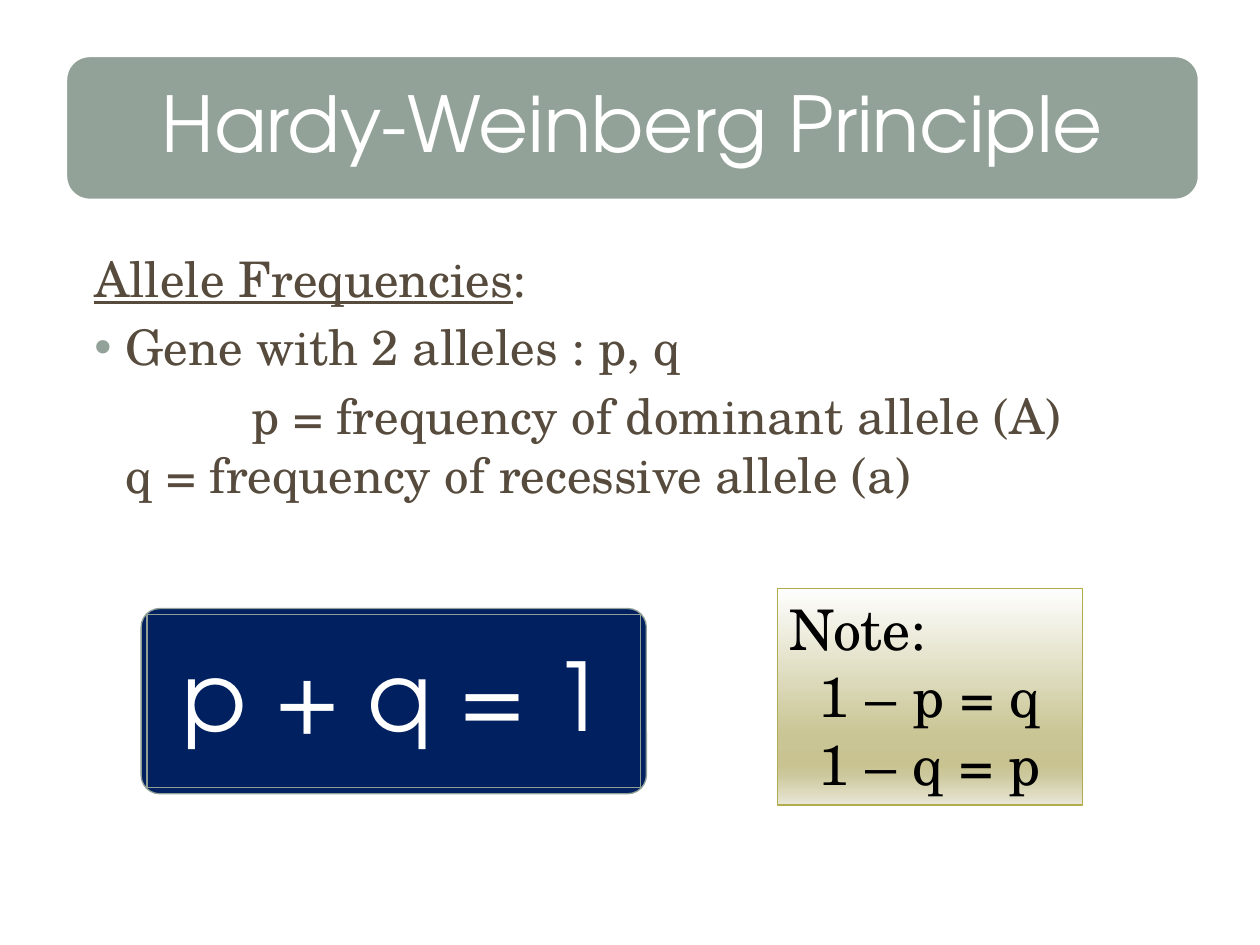
from collections import namedtuple

from lxml.etree import SubElement
from pptx import Presentation
from pptx.dml.color import RGBColor
from pptx.enum.shapes import MSO_SHAPE as Shape
from pptx.enum.text import MSO_ANCHOR as Anchor, MSO_AUTO_SIZE as AutoSize, PP_ALIGN as Align
from pptx.oxml.ns import qn
from pptx.util import Inches, Pt

COLORS = {
    "sage": "93A299", "sage_line": "8F9F96", "navy": "002060", "brown": "564B3C",
    "white": "FFFFFF", "black": "000000", "olive_line": "B3AC4F",
}
NOTE_STOPS = [(0, "FEFEFE"), (68, "C9C594"), (81, "C8C390"), (86, "CCC89C"), (100, "E9E7D7")]
SANS, SERIF = "TeX Gyre Adventor", "TeX Gyre Schola"

# Grid of 100 columns by 75 rows
SLIDE_W, SLIDE_H = Inches(10), Inches(7.5)
COL, ROW = SLIDE_W / 100, SLIDE_H / 75


class Box(namedtuple("Box", "left top width height")):
    def inset(self, gap):
        return Box(self.left + gap, self.top + gap, self.width - 2 * gap, self.height - 2 * gap)

    def emu(self):
        return (round(self.left * COL), round(self.top * ROW),
                round(self.width * COL), round(self.height * ROW))


def rgb(name):
    return RGBColor.from_string(COLORS[name])


def add_panel(slide, box, preset, fill=None, line="white", weight=0.75, corner=None):
    panel = slide.shapes.add_shape(preset, *box.emu())
    panel.shadow.inherit = False
    if corner is not None:
        panel.adjustments[0] = corner
    if fill:
        panel.fill.solid()
        panel.fill.fore_color.rgb = rgb(fill)
    panel.line.color.rgb = rgb(line)
    panel.line.width = Pt(weight)
    return panel


def set_frame(holder, anchor=Anchor.TOP, margin=None):
    frame = holder.text_frame
    frame.word_wrap = True
    frame.auto_size = AutoSize.NONE
    frame.vertical_anchor = anchor
    if margin is not None:
        frame.margin_left = frame.margin_right = Inches(margin)
        frame.margin_top = frame.margin_bottom = Inches(margin)
    return frame


def write(frame, text, font=SERIF, size=28, color="brown", align=Align.LEFT, underlined="",
          before=0, after=0, spacing=1.0, left=0, first=0, bullet=None):
    """Add a paragraph; before and after are shares of the text size."""
    paragraph = frame.paragraphs[0]
    if paragraph.text:
        paragraph = frame.add_paragraph()
    paragraph.alignment = align
    paragraph.line_spacing = spacing
    paragraph.space_before, paragraph.space_after = Pt(size * before), Pt(size * after)
    props = paragraph._p.get_or_add_pPr()
    props.set("marL", str(Inches(left)))
    props.set("indent", str(Inches(first)))
    if bullet:
        tint = SubElement(props, qn("a:buClr"))
        SubElement(tint, qn("a:srgbClr"), val=COLORS[bullet])
        SubElement(props, qn("a:buFont"), typeface="Arial")
        SubElement(props, qn("a:buChar"), char="•")
    else:
        SubElement(props, qn("a:buNone"))
    for part, underline in ((underlined, True), (text, False)):
        if not part:
            continue
        for number, row in enumerate(part.split("\n")):
            if number:
                paragraph.add_line_break()
            run = paragraph.add_run()
            run.text = row
            run.font.name, run.font.size = font, Pt(size)
            run.font.color.rgb = rgb(color)
            run.font.underline = underline


def add_title(slide, box):
    # Banner goes behind the title placeholder
    banner = add_panel(slide, box, Shape.ROUNDED_RECTANGLE, "sage", weight=2)
    title = slide.shapes.title
    title._element.addprevious(banner._element)
    title.left, title.top, title.width, title.height = box.inset(0.55).emu()
    write(set_frame(title, Anchor.MIDDLE, 0.18), "Hardy-Weinberg Principle", font=SANS, size=44,
          color="white", align=Align.CENTER, spacing=0.9, after=0.35)


def add_definitions(slide, box):
    frame = set_frame(slide.shapes.add_textbox(*box.emu()))
    hanging = dict(before=0.2, left=0.38, first=-0.25)
    write(frame, ":", underlined="Allele Frequencies", **hanging)
    write(frame, "Gene with 2 alleles : p, q", bullet="sage", **hanging)
    write(frame, "p = frequency of dominant allele (A)\nq = frequency of recessive allele (a)",
          before=0.2, left=0.38, first=1)


def add_formula(slide, box):
    add_panel(slide, box, Shape.ROUNDED_RECTANGLE, "navy", "sage_line", corner=0.1)
    inner = add_panel(slide, box.inset(0.48), Shape.RECTANGLE, "navy", "sage_line")
    write(set_frame(inner, Anchor.MIDDLE, 0.11), "p + q = 1", font=SANS, size=54,
          color="white", align=Align.CENTER, spacing=0.9, after=0.35)


def add_note(slide, box):
    note = add_panel(slide, box, Shape.RECTANGLE, line="olive_line")
    # Five-stop gradient from top to bottom
    note.fill.gradient()
    note.fill.gradient_angle = 270
    stops = note._element.spPr.find(qn("a:gradFill")).find(qn("a:gsLst"))
    for stop in list(stops):
        stops.remove(stop)
    for position, color in NOTE_STOPS:
        stop = SubElement(stops, qn("a:gs"), pos=str(position * 1000))
        SubElement(stop, qn("a:srgbClr"), val=color)
    frame = set_frame(note)
    write(frame, "Note:", size=32, color="black")
    for equation in ("1 – p = q", "1 – q = p"):
        write(frame, equation, size=32, color="black", align=Align.CENTER)


def main():
    deck = Presentation()
    deck.slide_width, deck.slide_height = SLIDE_W, SLIDE_H
    slide = deck.slides.add_slide(deck.slide_layouts[5])
    add_title(slide, Box(5.2, 4.4, 90, 11.5))
    add_definitions(slide, Box(5.2, 19.2, 90, 47.8))
    add_formula(slide, Box(11.2, 48.3, 40.1, 14.7))
    add_note(slide, Box(61.7, 46.7, 24.2, 17.2))
    deck.save("out.pptx")


if __name__ == "__main__":
    main()
